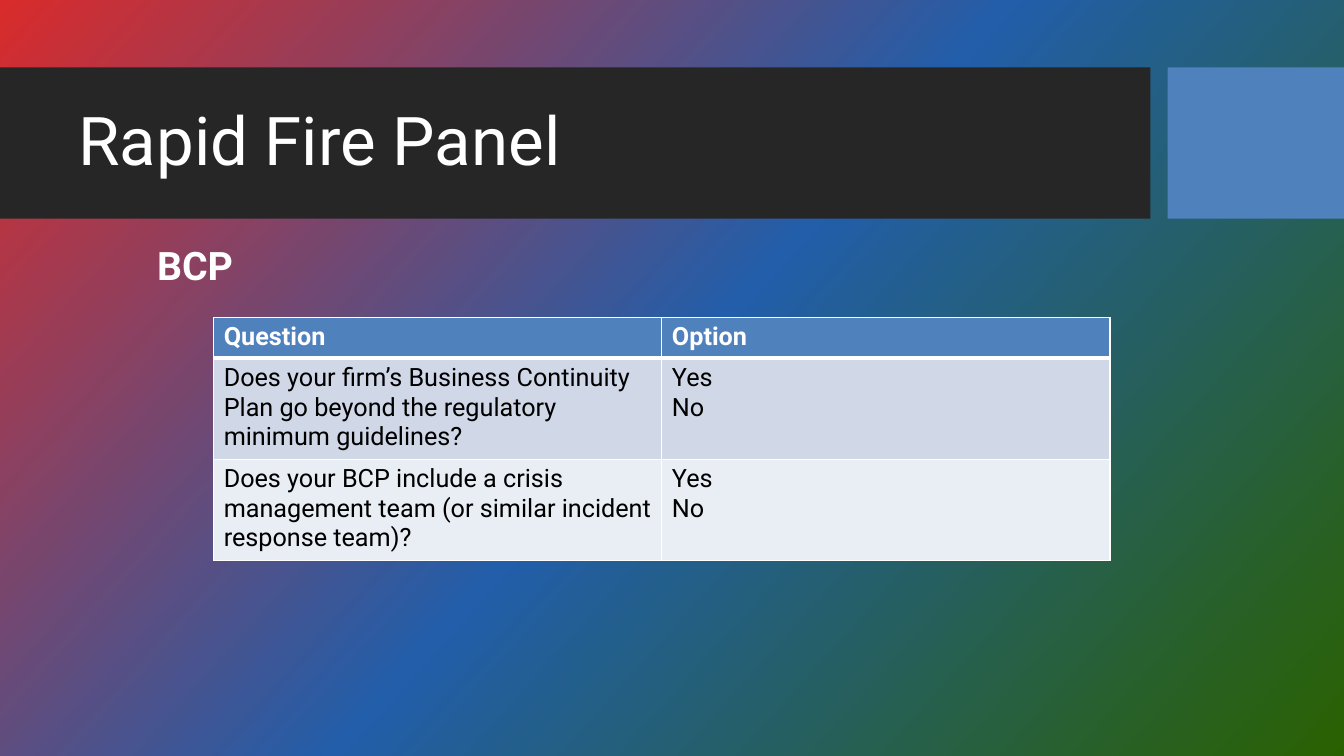
"""Build the Rapid Fire Panel slide with its question table."""
from copy import deepcopy
from dataclasses import dataclass
from typing import Any

from lxml.etree import SubElement as Sub
from pptx import Presentation
from pptx.dml.color import RGBColor as Rgb
from pptx.enum.shapes import MSO_SHAPE as Shape
from pptx.enum.text import MSO_ANCHOR as Anchor
from pptx.oxml.ns import qn
from pptx.util import Inches, Pt


@dataclass(frozen=True)
class Theme:
    """Hold the colours and type sizes."""
    face: str = "Roboto"
    dark: str = "262626"
    blue: str = "4F81BD"
    white: str = "FFFFFF"
    black: str = "000000"
    bands: tuple = ("D0D8E8", "E9EDF4")
    fade: tuple = ((0, "D92B2B"), (0.5, "225EA9"), (1, "2A6100"))
    angle: int = 318
    title: int = 48
    head: int = 28
    body: int = 18
    thin: int = 1
    thick: int = 3


@dataclass(frozen=True)
class Box:
    """Place a box in percent of the slide's size."""
    left: float
    top: float
    width: float
    height: float

    def place(self) -> tuple:
        """Return the box as lengths."""
        return (across(self.left), down(self.top),
                across(self.width), down(self.height))


@dataclass(frozen=True)
class Panel:
    """Describe a plain filled block."""
    box: Box
    fill: str


@dataclass(frozen=True)
class Label:
    """Describe a line of text in a box."""
    box: Box
    text: str
    size: int
    bold: bool
    anchor: Any
    space: float


THEME = Theme()
WIDE, HIGH = Inches(13.33), Inches(7.5)
PANELS = (
    Panel(Box(0, 8.93, 85.6, 20), THEME.dark),
    Panel(Box(86.87, 8.93, 13.13, 20), THEME.blue),
)
LABELS = (
    Label(Box(5.1, 12.4, 80.5, 13.33), "Rapid Fire Panel",
          THEME.title, False, Anchor.MIDDLE, 0.9),
    Label(Box(10.95, 31.2, 87.4, 57.87), "BCP",
          THEME.head, True, Anchor.TOP, 1.0),
)
GRID = Box(15.9, 42, 66.7, 32.1)
ROWS = (5.4, 13.35, 13.35)
CELLS = (
    ("Question", "Option"),
    ("Does your firm’s Business Continuity Plan go beyond the regulatory "
     "minimum guidelines?", "Yes\nNo"),
    ("Does your BCP include a crisis management team (or similar incident "
     "response team)?", "Yes\nNo"),
)


def across(share: float) -> int:
    """Turn a percent of the width into a length."""
    return round(WIDE * share / 100)


def down(share: float) -> int:
    """Turn a percent of the height into a length."""
    return round(HIGH * share / 100)


def apply(item: Any, form: dict) -> None:
    """Set each format value on an item."""
    for name, value in form.items():
        setattr(item, name, value)


def write(frame: Any, text: str, size: int, bold: bool, tint: str) -> None:
    """Fill a frame with styled text."""
    frame.text = text
    for para in frame.paragraphs:
        apply(para.font, {"name": THEME.face, "size": Pt(size), "bold": bold})
        para.font.color.rgb = Rgb.from_string(tint)


def paint(fill: Any, tint: str) -> None:
    """Give a fill one solid colour."""
    fill.solid()
    fill.fore_color.rgb = Rgb.from_string(tint)


def shade(slide: Any) -> None:
    """Lay the colour fade behind the slide."""
    fill = slide.background.fill
    fill.gradient()
    fill.gradient_angle = THEME.angle
    stops = slide.element.find(".//" + qn("a:gsLst"))
    stops.append(deepcopy(stops[-1]))
    for stop, (place, tint) in zip(fill.gradient_stops, THEME.fade):
        stop.position = place
        stop.color.rgb = Rgb.from_string(tint)


def block(slide: Any, panel: Panel) -> None:
    """Draw a plain filled block."""
    shape = slide.shapes.add_shape(Shape.RECTANGLE, *panel.box.place())
    shape.shadow.inherit = False
    paint(shape.fill, panel.fill)
    shape.line.fill.background()


def label(slide: Any, item: Label) -> None:
    """Draw a line of white text."""
    frame = slide.shapes.add_textbox(*item.box.place()).text_frame
    apply(frame, {"word_wrap": True, "vertical_anchor": item.anchor})
    write(frame, item.text, item.size, item.bold, THEME.white)
    frame.paragraphs[0].line_spacing = item.space


def edge(cell: Any, widths: dict) -> None:
    """Draw the white borders of a cell."""
    props = cell._tc.get_or_add_tcPr()
    for side, width in widths.items():
        line = Sub(props, qn(f"a:ln{side}"), w=str(Pt(width)))
        solid = Sub(line, qn("a:solidFill"))
        Sub(solid, qn("a:srgbClr"), val=THEME.white)


def table(slide: Any) -> None:
    """Draw the table of questions."""
    count = len(CELLS[0])
    grid = slide.shapes.add_table(len(CELLS), count, *GRID.place()).table
    apply(grid, {"first_row": True, "horz_banding": False})
    for col in grid.columns:
        col.width = across(GRID.width / count)
    for r, (row, texts) in enumerate(zip(grid.rows, CELLS)):
        row.height = down(ROWS[r])
        head = r == 0
        above = THEME.thick if r == 1 else THEME.thin
        below = THEME.thick if head else THEME.thin
        for cell, text in zip(row.cells, texts):
            edge(cell, {"L": THEME.thin, "R": THEME.thin,
                        "T": above, "B": below})
            paint(cell.fill, THEME.blue if head else THEME.bands[r - 1])
            write(cell.text_frame, text, THEME.body, head,
                  THEME.white if head else THEME.black)


def main() -> None:
    """Build and save the deck."""
    deck = Presentation()
    apply(deck, {"slide_width": WIDE, "slide_height": HIGH})
    slide = deck.slides.add_slide(deck.slide_layouts[6])
    shade(slide)
    for panel in PANELS:
        block(slide, panel)
    for item in LABELS:
        label(slide, item)
    table(slide)
    deck.save("out.pptx")


if __name__ == "__main__":
    main()
